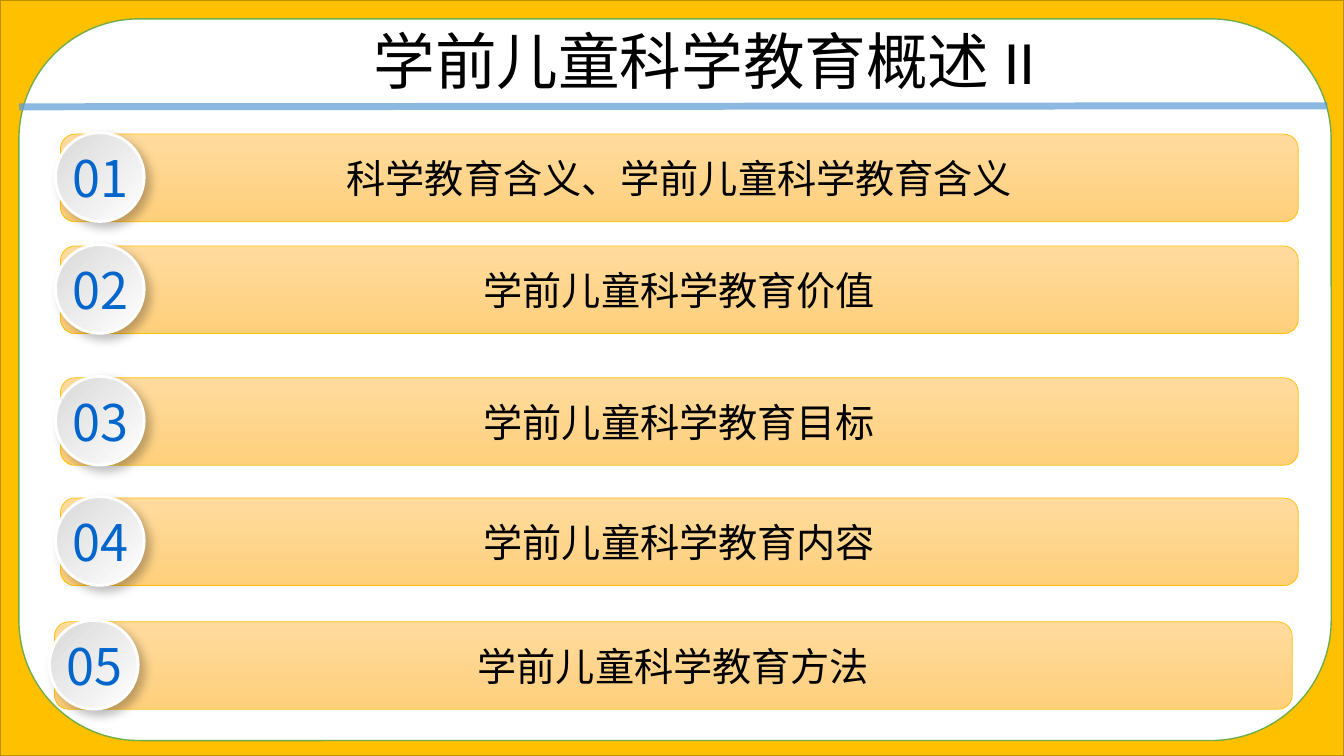
from lxml.etree import SubElement
from pptx import Presentation
from pptx.dml.color import RGBColor
from pptx.enum.shapes import MSO_CONNECTOR, MSO_SHAPE
from pptx.enum.text import MSO_ANCHOR, MSO_AUTO_SIZE, PP_ALIGN
from pptx.oxml.ns import qn
from pptx.util import Pt

AMBER = RGBColor(0xFF, 0xC0, 0x00)
DARK_AMBER = RGBColor(0xBD, 0x8E, 0x00)
GREEN = RGBColor(0x70, 0xAD, 0x47)
BLUE = RGBColor(0x5B, 0x9B, 0xD5)
NUMBER_BLUE = RGBColor(0x00, 0x66, 0xCC)
PALE_ORANGE = RGBColor(0xFF, 0xDB, 0x9E)
SOFT_ORANGE = RGBColor(0xFF, 0xD0, 0x7C)
GREY = RGBColor(0xD9, 0xD9, 0xD9)
WHITE = RGBColor(0xFF, 0xFF, 0xFF)
BLACK = RGBColor(0x00, 0x00, 0x00)

TOPICS = [
    ("科学教育含义、学前儿童科学教育含义", 43.2, 95.8),
    ("学前儿童科学教育价值", 43.2, 175.7),
    ("学前儿童科学教育目标", 43.2, 269.8),
    ("学前儿童科学教育内容", 43.2, 355.7),
    ("学前儿童科学教育方法", 38.9, 444.1),
]


class OutlineSlide:
    text_font = "Calibri"
    number_font = "Noto Sans CJK SC"

    def __init__(self, presentation):
        self.slide = presentation.slides.add_slide(presentation.slide_layouts[5])

    def place(self, shape, left, top, width, height):
        shape.left, shape.top = Pt(left), Pt(top)
        shape.width, shape.height = Pt(width), Pt(height)

    def set_text(self, shape, text, size, color, name, anchor=MSO_ANCHOR.TOP):
        frame = shape.text_frame
        frame.word_wrap = True
        frame.auto_size = MSO_AUTO_SIZE.NONE
        frame.vertical_anchor = anchor
        frame.text = text
        paragraph = frame.paragraphs[0]
        paragraph.alignment = PP_ALIGN.CENTER
        paragraph.font.size = Pt(size)
        paragraph.font.color.rgb = color
        paragraph.font.name = name
        defaults = paragraph._p.find(".//" + qn("a:defRPr"))
        SubElement(defaults, qn("a:ea"), typeface=self.number_font)

    def panel(self, shapes, kind, box, colors, line_color, line_width, angle=270):
        shape = shapes.add_shape(kind, *map(Pt, box))
        shape.shadow.inherit = False
        if len(colors) == 1:
            shape.fill.solid()
            shape.fill.fore_color.rgb = colors[0]
        else:
            shape.fill.gradient()
            shape.fill.gradient_angle = angle
            for stop, color in zip(shape.fill.gradient_stops, colors):
                stop.color.rgb = color
        shape.line.color.rgb = line_color
        shape.line.width = Pt(line_width)
        return shape

    def backdrop(self):
        shapes = self.slide.shapes
        self.panel(shapes, MSO_SHAPE.RECTANGLE, (0, 0, 960, 540), [AMBER], DARK_AMBER, 1)
        self.panel(shapes, MSO_SHAPE.ROUNDED_RECTANGLE, (13.5, 13.5, 937.4, 515.5),
                   [WHITE], GREEN, 1)

    def rule(self, start_x, start_y, end_x, end_y):
        connector = self.slide.shapes.add_connector(
            MSO_CONNECTOR.STRAIGHT, Pt(start_x), Pt(start_y), Pt(end_x), Pt(end_y))
        connector.line.color.rgb = BLUE
        connector.line.width = Pt(5)
        color = connector._element.spPr.find(".//" + qn("a:srgbClr"))
        SubElement(color, qn("a:alpha"), val="69000")
        SubElement(connector._element.spPr, qn("a:effectLst"))

    def title(self, text):
        title = self.slide.shapes.title
        self.place(title, 23, 13, 960, 60.5)
        self.set_text(title, text, 44, BLACK, self.text_font)
        self.slide.shapes.element.append(title.element)

    def bar(self, text, left, top):
        shape = self.panel(self.slide.shapes, MSO_SHAPE.ROUNDED_RECTANGLE,
                           (left, top, 884.2, 62.6), [PALE_ORANGE, SOFT_ORANGE], AMBER, 0.5)
        self.set_text(shape, text, 28, BLACK, self.text_font, MSO_ANCHOR.MIDDLE)

    def badge(self, number, left, top):
        group = self.slide.shapes.add_group_shape()
        circle = self.panel(group.shapes, MSO_SHAPE.OVAL, (left - 3.6, top - 1, 63.4, 63.4),
                            [GREY, WHITE], WHITE, 2, 315)
        self.cast_shadow(circle)
        label = group.shapes.add_textbox(Pt(left), Pt(top + 5.8), Pt(57.6), Pt(51))
        self.set_text(label, f"{number:02d}", 36, NUMBER_BLUE, self.number_font)

    def cast_shadow(self, shape):
        effects = shape._element.spPr.find(qn("a:effectLst"))
        shadow = SubElement(effects, qn("a:outerShdw"), blurRad=str(Pt(7)), dist=str(Pt(5)),
                            dir="2700000", algn="tl", rotWithShape="0")
        color = SubElement(shadow, qn("a:srgbClr"), val=str(BLACK))
        SubElement(color, qn("a:alpha"), val="25000")


def main():
    presentation = Presentation()
    presentation.slide_width, presentation.slide_height = Pt(960), Pt(540)
    outline = OutlineSlide(presentation)
    outline.backdrop()
    outline.rule(13.7, 76.3, 948.2, 75.6)
    outline.title("学前儿童科学教育概述 II")
    for number, (topic, left, top) in enumerate(TOPICS, 1):
        outline.bar(topic, left, top)
        outline.badge(number, left, top)
    presentation.save("out.pptx")


if __name__ == "__main__":
    main()
